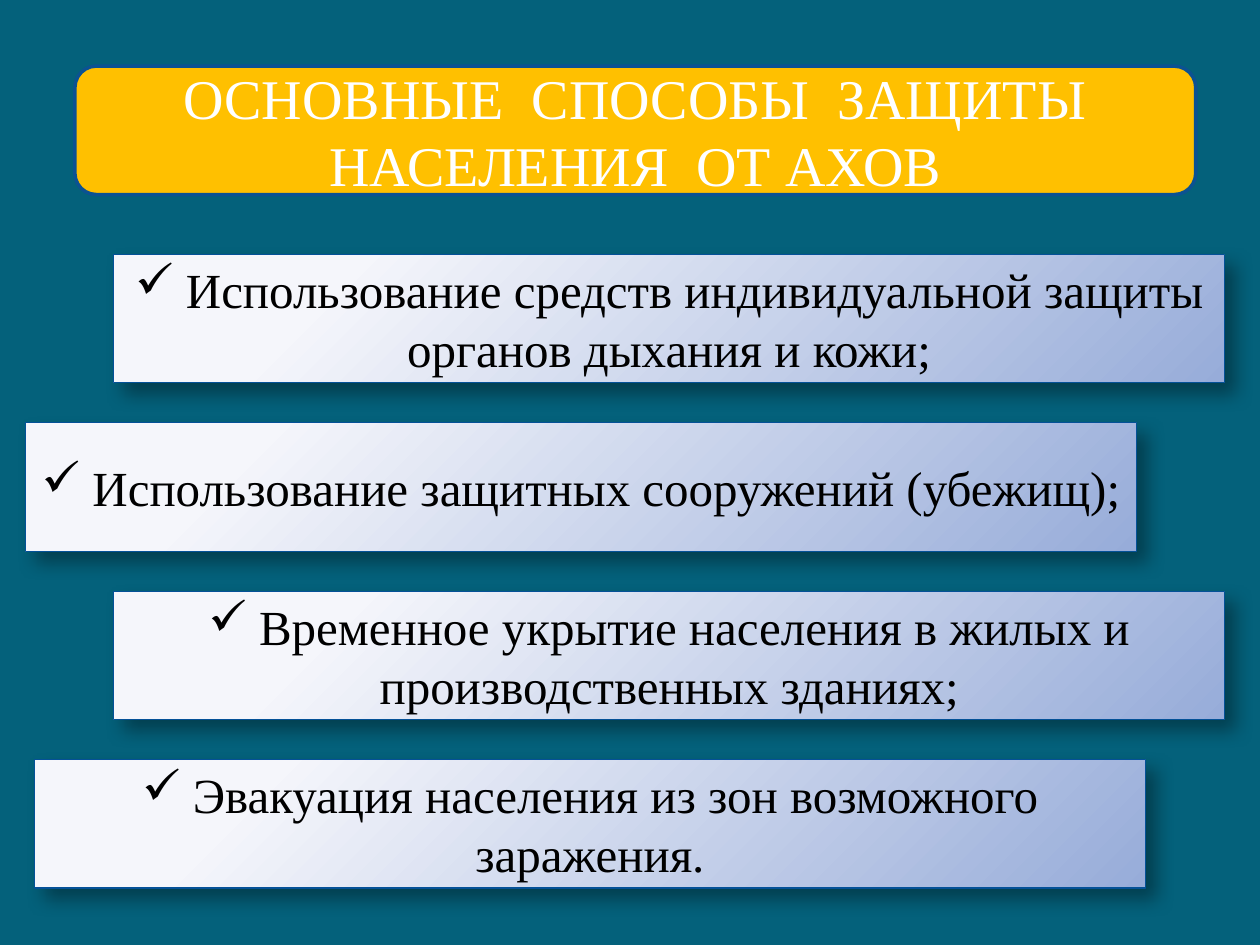
from dataclasses import dataclass

from lxml import etree
from pptx import Presentation
from pptx.dml.color import RGBColor
from pptx.enum.shapes import MSO_SHAPE
from pptx.enum.text import MSO_ANCHOR, PP_ALIGN
from pptx.oxml import parse_xml
from pptx.oxml.ns import qn
from pptx.util import Pt

ROUNDED, RECTANGLE = MSO_SHAPE.ROUNDED_RECTANGLE, MSO_SHAPE.RECTANGLE
MIDDLE, CENTER = MSO_ANCHOR.MIDDLE, PP_ALIGN.CENTER


@dataclass(frozen=True)
class Theme:
    font: str = "Times New Roman"
    title_size: int = 32
    item_size: int = 28
    background: str = "04617B"
    title_fill: str = "FFC000"
    title_line: str = "0B5292"
    title_text: str = "FFFFFF"
    item_light: str = "F5F6FB"
    item_dark: str = "97ACD9"
    item_line: str = "045197"
    item_text: str = "000000"
    shadow: str = "000000"


theme = Theme()
color = RGBColor.from_string

SHADOW = f"""<a:effectLst xmlns:a="http://schemas.openxmlformats.org/drawingml/2006/main">
  <a:outerShdw blurRad="{Pt(10.2)}" dist="{Pt(8)}" dir="2700000" algn="tl" rotWithShape="0">
    <a:srgbClr val="{theme.shadow}"><a:alpha val="35000"/></a:srgbClr>
  </a:outerShdw>
</a:effectLst>"""


def add_panel(kind, bounds, text, size, text_color, line_color, line_width, bullet=None):
    """Add an outlined shape with centred text and return it, still unfilled."""
    panel = page.shapes.add_shape(kind, *(Pt(value) for value in bounds))
    panel.shadow.inherit = False
    panel.line.color.rgb = color(line_color)
    panel.line.width = Pt(line_width)
    frame = panel.text_frame
    frame.word_wrap = True
    frame.vertical_anchor = MIDDLE
    para = frame.paragraphs[0]
    para.alignment = CENTER
    if bullet:
        etree.SubElement(para._p.get_or_add_pPr(), qn("a:buChar"), char=bullet)
    span = para.add_run()
    span.text = text
    for name, value in {"name": theme.font, "size": Pt(size)}.items():
        setattr(span.font, name, value)
    span.font.color.rgb = color(text_color)
    return panel


def fill_radial(panel):
    """Fill with a round gradient that spreads from the upper left corner."""
    panel.fill.gradient()
    stops = zip(panel.fill.gradient_stops, (0.2, 1), (theme.item_light, theme.item_dark))
    for stop, position, shade in stops:
        stop.position = position
        stop.color.rgb = color(shade)
    gradient = panel._element.spPr.find(qn("a:gradFill"))
    gradient.remove(gradient.find(qn("a:lin")))
    circle = etree.SubElement(gradient, qn("a:path"), path="circle")
    etree.SubElement(circle, qn("a:fillToRect"), l="-15000", t="-15000", r="115000", b="115000")


deck = Presentation()
deck.slide_width, deck.slide_height = Pt(720), Pt(540)
page = deck.slides.add_slide(deck.slide_layouts[6])
page.background.fill.solid()
page.background.fill.fore_color.rgb = color(theme.background)

title = add_panel(ROUNDED, (42.8, 37.8, 640.5, 73.4),
                  "ОСНОВНЫЕ  СПОСОБЫ  ЗАЩИТЫ НАСЕЛЕНИЯ  ОТ АХОВ",
                  theme.title_size, theme.title_text, theme.title_line, 2)
title.fill.solid()
title.fill.fore_color.rgb = color(theme.title_fill)

FIRST_TOP, ROW_STEP = 145.4, 96.2
ITEM_WIDTH, ITEM_HEIGHT = 635, 73.4
measures = [
    (64.8, "Использование средств индивидуальной защиты органов дыхания и кожи;"),
    (14.4, "Использование защитных сооружений (убежищ);"),
    (64.8, "Временное укрытие населения в жилых и производственных зданиях;"),
    (19.6, "Эвакуация населения из зон возможного заражения."),
]
for row, (left, text) in enumerate(measures):
    bounds = (left, FIRST_TOP + row * ROW_STEP, ITEM_WIDTH, ITEM_HEIGHT)
    item = add_panel(RECTANGLE, bounds, " " + text, theme.item_size,
                     theme.item_text, theme.item_line, 0.75, bullet="✓")
    fill_radial(item)
    properties = item._element.spPr
    properties.replace(properties.find(qn("a:effectLst")), parse_xml(SHADOW))

deck.save("out.pptx")
